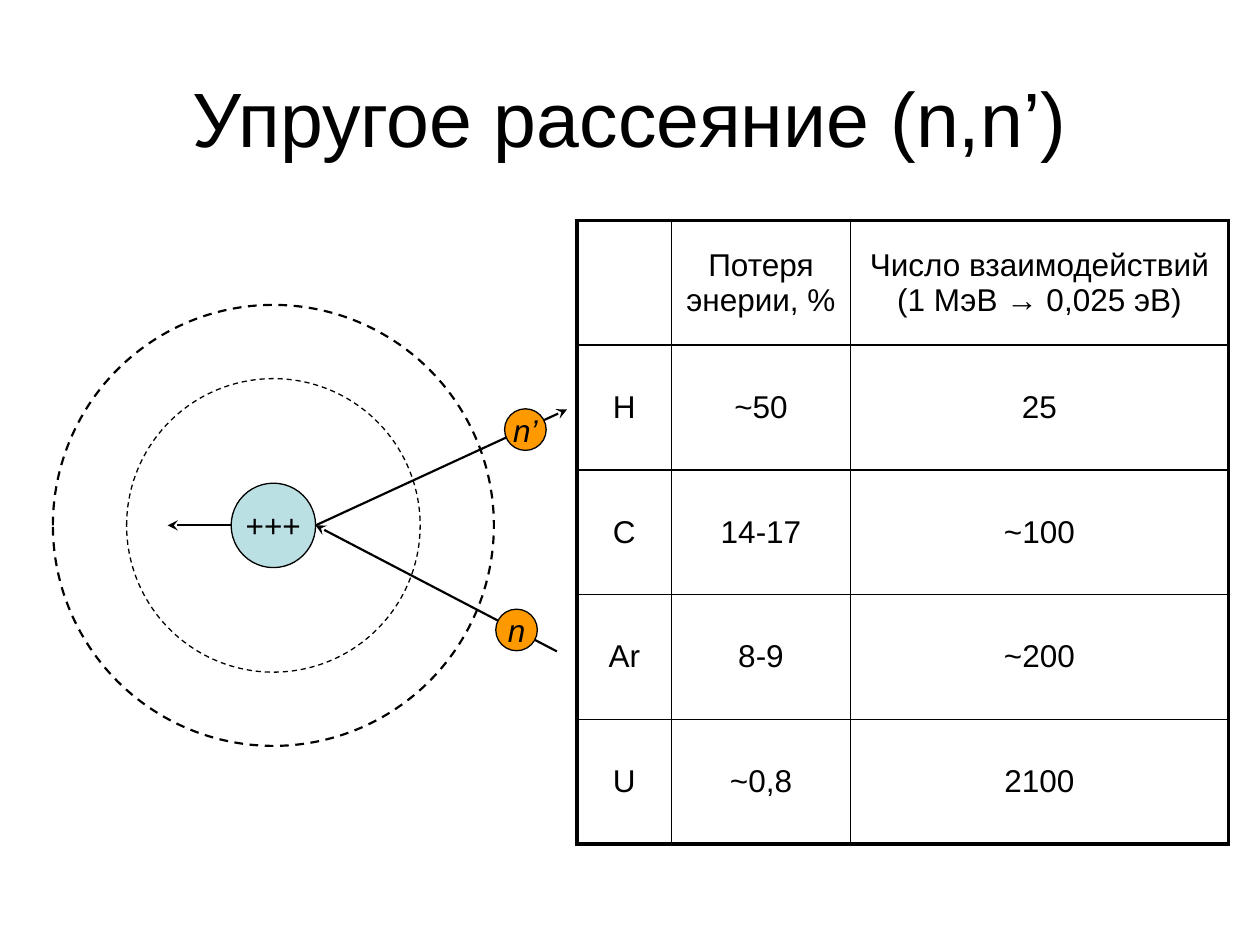
import pptx
import pptx.dml.color
import pptx.enum.dml
import pptx.enum.shapes
import pptx.enum.text
import pptx.oxml.ns
import pptx.util
from dataclasses import dataclass
from lxml import etree

Inches, Pt = pptx.util.Inches, pptx.util.Pt
MIDDLE = pptx.enum.text.MSO_ANCHOR.MIDDLE


@dataclass(frozen=True)
class Theme:
    font: str = "Arial"
    ink: str = "000000"
    nucleus: str = "BBE0E3"
    neutron: str = "FF9900"
    title: float = 44
    body: float = 18
    thin: float = 0.75
    medium: float = 1.25
    grid: float = 1
    frame: float = 2.25


def rgb(value):
    return pptx.dml.color.RGBColor.from_string(value)


def add_xml(parent, tag, **attributes):
    return etree.SubElement(parent, pptx.oxml.ns.qn(tag), attributes)


class SlideBuilder:
    def __init__(self, slide, theme):
        self.s = slide
        self.theme = theme

    def label(self, tf, text, size, italic=False):
        tf.vertical_anchor = MIDDLE
        p = tf.paragraphs[0]
        p.alignment = pptx.enum.text.PP_ALIGN.CENTER
        r = p.add_run()
        r.text = text
        style = {"name": self.theme.font, "size": Pt(size), "italic": italic}
        for name, value in style.items():
            setattr(r.font, name, value)
        r.font.color.rgb = rgb(self.theme.ink)

    def title(self, text, left, top, width, height):
        box = self.s.shapes.add_textbox(*map(Inches, (left, top, width, height)))
        box.text_frame.word_wrap = True
        self.label(box.text_frame, text, self.theme.title)

    def stroke(self, line, width):
        line.color.rgb = rgb(self.theme.ink)
        line.width = Pt(width)

    def circle(self, cx, cy, diameter, width, fill=None, text=None, italic=False):
        """A filled circle is a particle; one without fill is a dashed orbit."""
        box = (cx - diameter / 2, cy - diameter / 2, diameter, diameter)
        sp = self.s.shapes.add_shape(
            pptx.enum.shapes.MSO_SHAPE.OVAL, *map(Inches, box))
        sp.shadow.inherit = False
        self.stroke(sp.line, width)
        if fill:
            sp.fill.solid()
            sp.fill.fore_color.rgb = rgb(fill)
        else:
            sp.fill.background()
            sp.line.dash_style = pptx.enum.dml.MSO_LINE.DASH
        if text:
            sp.text_frame.word_wrap = False
            self.label(sp.text_frame, text, self.theme.body, italic)

    def arrow(self, start, end):
        sp = self.s.shapes.add_connector(
            pptx.enum.shapes.MSO_CONNECTOR.STRAIGHT, *map(Inches, start + end))
        self.stroke(sp.line, self.theme.medium)
        sp_pr = sp._element.spPr
        add_xml(sp_pr.find(pptx.oxml.ns.qn("a:ln")), "a:tailEnd", type="stealth")
        add_xml(sp_pr, "a:effectLst")

    def border(self, cell, side, width):
        ln = add_xml(cell._tc.get_or_add_tcPr(), f"a:ln{side}", w=str(Pt(width)))
        add_xml(add_xml(ln, "a:solidFill"), "a:srgbClr", val=self.theme.ink)

    def table(self, rows, left, top, widths, row_height):
        n_rows, n_cols = len(rows), len(widths)
        box = (left, top, sum(widths), row_height * n_rows)
        table = self.s.shapes.add_table(n_rows, n_cols, *map(Inches, box)).table
        table.first_row = table.horz_banding = False
        for column, width in zip(table.columns, widths):
            column.width = Inches(width)
        for i, row in enumerate(rows):
            table.rows[i].height = Inches(row_height)
            for j, text in enumerate(row):
                cell = table.cell(i, j)
                outer = {"L": j == 0, "R": j == n_cols - 1,
                         "T": i == 0, "B": i == n_rows - 1}
                for side, is_outer in outer.items():
                    self.border(cell, side,
                                self.theme.frame if is_outer else self.theme.grid)
                cell.fill.background()
                cell.vertical_anchor = MIDDLE
                if text:
                    # The anchor of a cell is set on the cell itself
                    self.cell_text(cell, text)

    def cell_text(self, cell, text):
        self.label(cell.text_frame, text, self.theme.body)
        # A cell keeps its anchor in its own properties
        cell.text_frame.vertical_anchor = None


def main():
    prs = pptx.Presentation()
    prs.slide_width, prs.slide_height = Inches(10), Inches(7.5)
    theme = Theme()
    b = SlideBuilder(prs.slides.add_slide(prs.slide_layouts[6]), theme)

    b.title("Упругое рассеяние (n,n’)", 0.5, 0.3, 9, 1.25)

    # Nucleus and its electron orbits
    cx, cy, nucleus = 2.17, 4.17, 0.67
    b.circle(cx, cy, nucleus, theme.thin, theme.nucleus, "+++")
    b.circle(cx, cy, 2.33, theme.thin)
    b.circle(cx, cy, 3.5, theme.medium)

    # Incoming neutron, scattered neutron, recoil of the nucleus
    hit = (cx + nucleus / 2, cy)
    recoil = (cx - nucleus / 2, cy)
    b.arrow((4.42, 5.17), hit)
    b.arrow(hit, (4.5, 3.25))
    for name, x, y in (("n’", 4.17, 3.41), ("n", 4.1, 5)):
        b.circle(x, y, 0.33, theme.thin, theme.neutron, name, italic=True)
    b.arrow(recoil, (1.33, cy))

    # Energy loss by element
    rows = [
        ("", "Потеря энерии, %", "Число взаимодействий (1 МэВ → 0,025 эВ)"),
        ("H", "~50", "25"),
        ("C", "14-17", "~100"),
        ("Ar", "8-9", "~200"),
        ("U", "~0,8", "2100"),
    ]
    b.table(rows, 4.58, 1.75, (0.75, 1.42, 3), 0.99)

    prs.save("out.pptx")


if __name__ == "__main__":
    main()
